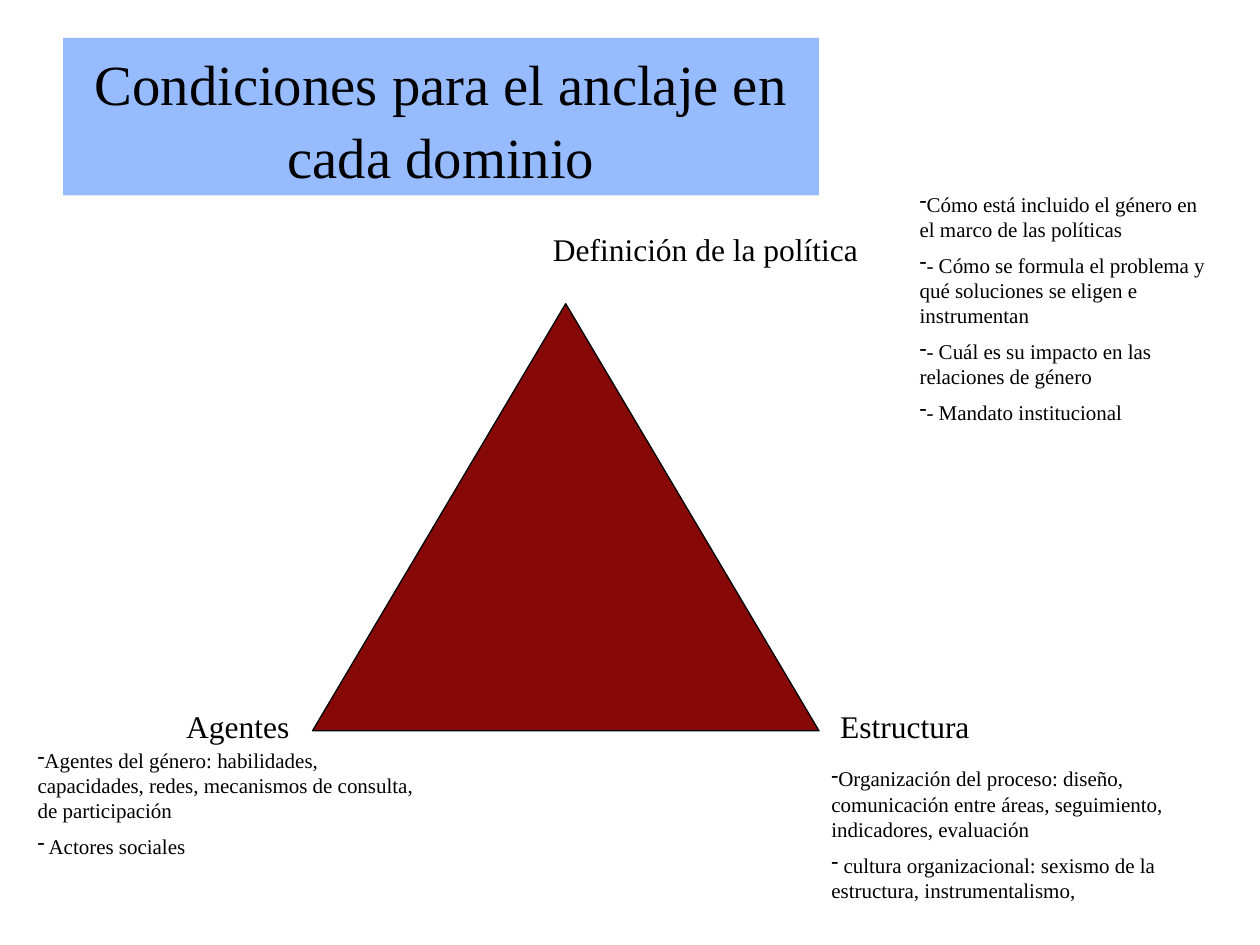
import pptx
import pptx.dml.color
import pptx.enum.shapes
import pptx.enum.text
import pptx.oxml
import pptx.util
from dataclasses import dataclass
from pptx.util import Inches


@dataclass(frozen=True)
class Theme:
    """Colours, font and type sizes of the slide."""
    font: str = "Times New Roman"
    text: str = "000000"
    banner: str = "96BCFF"
    triangle: str = "860908"
    title_size: float = 32.4
    label_size: float = 18
    list_size: float = 12


THEME = Theme()

LABELS = [
    ("Definición de la política", (4.29, 1.78, 2.91, 0.4)),
    ("Estructura", (6.57, 5.56, 1.57, 0.4)),
    ("Agentes", (1.38, 5.56, 1.1, 0.4)),
]

CONDITIONS = [
    ([
        "Cómo está incluido el género en el marco de las políticas",
        "- Cómo se formula el problema y qué soluciones se eligen e instrumentan",
        "- Cuál es su impacto en las relaciones de género",
        "- Mandato institucional",
    ], (7.2, 1.47, 2.52, 2)),
    ([
        "Organización del proceso: diseño, comunicación entre áreas, "
        "seguimiento, indicadores, evaluación",
        " cultura organizacional: sexismo de la estructura, instrumentalismo,",
    ], (6.5, 6.03, 3.15, 1.2)),
    ([
        "Agentes del género: habilidades, capacidades, redes, "
        "mecanismos de consulta, de participación",
        " Actores sociales",
    ], (0.2, 5.88, 3.23, 1)),
]


def rgb(value):
    """Return a colour object for a hex value."""
    return pptx.dml.color.RGBColor.from_string(value)


def set_attributes(target, values):
    """Set every attribute in a dict of format values."""
    for name, value in values.items():
        setattr(target, name, value)


def place(shape, box):
    """Move and size a shape in inches."""
    names = ("left", "top", "width", "height")
    set_attributes(shape, dict(zip(names, map(Inches, box))))


def fill_shape(shape, color):
    """Give a shape a solid fill."""
    shape.fill.solid()
    shape.fill.fore_color.rgb = rgb(color)


def format_font(paragraph, size):
    """Apply the theme font to a paragraph."""
    set_attributes(paragraph.font, {"name": THEME.font, "size": pptx.util.Pt(size)})
    paragraph.font.color.rgb = rgb(THEME.text)


def add_dash(paragraph):
    """Give a paragraph a dash bullet without indent."""
    properties = paragraph._p.get_or_add_pPr()
    set_attributes(paragraph, {"level": 0})
    properties.set("marL", "0")
    properties.set("indent", "0")
    namespace = "http://schemas.openxmlformats.org/drawingml/2006/main"
    properties.append(pptx.oxml.parse_xml(f'<a:buChar xmlns:a="{namespace}" char="-"/>'))


def add_title(slide, text, box):
    """Fill the title placeholder as a coloured banner."""
    title = slide.shapes.title
    place(title, box)
    fill_shape(title, THEME.banner)
    set_attributes(title.text_frame, {
        "text": text,
        "word_wrap": True,
        "auto_size": pptx.enum.text.MSO_AUTO_SIZE.NONE,
        "vertical_anchor": pptx.enum.text.MSO_ANCHOR.MIDDLE,
    })
    paragraph = title.text_frame.paragraphs[0]
    set_attributes(paragraph, {
        "alignment": pptx.enum.text.PP_ALIGN.CENTER,
        "line_spacing": pptx.util.Pt(42),
    })
    format_font(paragraph, THEME.title_size)


def add_triangle(slide, box):
    """Draw the triangle that joins the three domains."""
    triangle = slide.shapes.add_shape(
        pptx.enum.shapes.MSO_SHAPE.FLOWCHART_EXTRACT, *map(Inches, box))
    triangle.shadow.inherit = False
    fill_shape(triangle, THEME.triangle)
    triangle.line.color.rgb = rgb(THEME.text)
    triangle.line.width = pptx.util.Pt(0.75)


def add_text(slide, lines, box, size, dashed=False):
    """Add a text box with one paragraph per line."""
    frame = slide.shapes.add_textbox(*map(Inches, box)).text_frame
    set_attributes(frame, {
        "text": "\n".join(lines),
        "word_wrap": True,
        "auto_size": pptx.enum.text.MSO_AUTO_SIZE.SHAPE_TO_FIT_TEXT,
    })
    for index, paragraph in enumerate(frame.paragraphs):
        if index:
            paragraph.space_before = pptx.util.Pt(size / 2)
        if dashed:
            add_dash(paragraph)
        format_font(paragraph, size)


def main():
    """Build and save the slide."""
    presentation = pptx.Presentation()
    set_attributes(presentation, {"slide_width": Inches(10), "slide_height": Inches(7.5)})
    slide = presentation.slides.add_slide(presentation.slide_layouts[5])
    add_title(slide, "Condiciones para el anclaje en cada dominio", (0.5, 0.3, 6, 1.25))
    add_triangle(slide, (2.48, 2.41, 4.02, 3.39))
    for text, box in LABELS:
        add_text(slide, [text], box, THEME.label_size)
    for lines, box in CONDITIONS:
        add_text(slide, lines, box, THEME.list_size, dashed=True)
    presentation.save("out.pptx")


if __name__ == "__main__":
    main()
